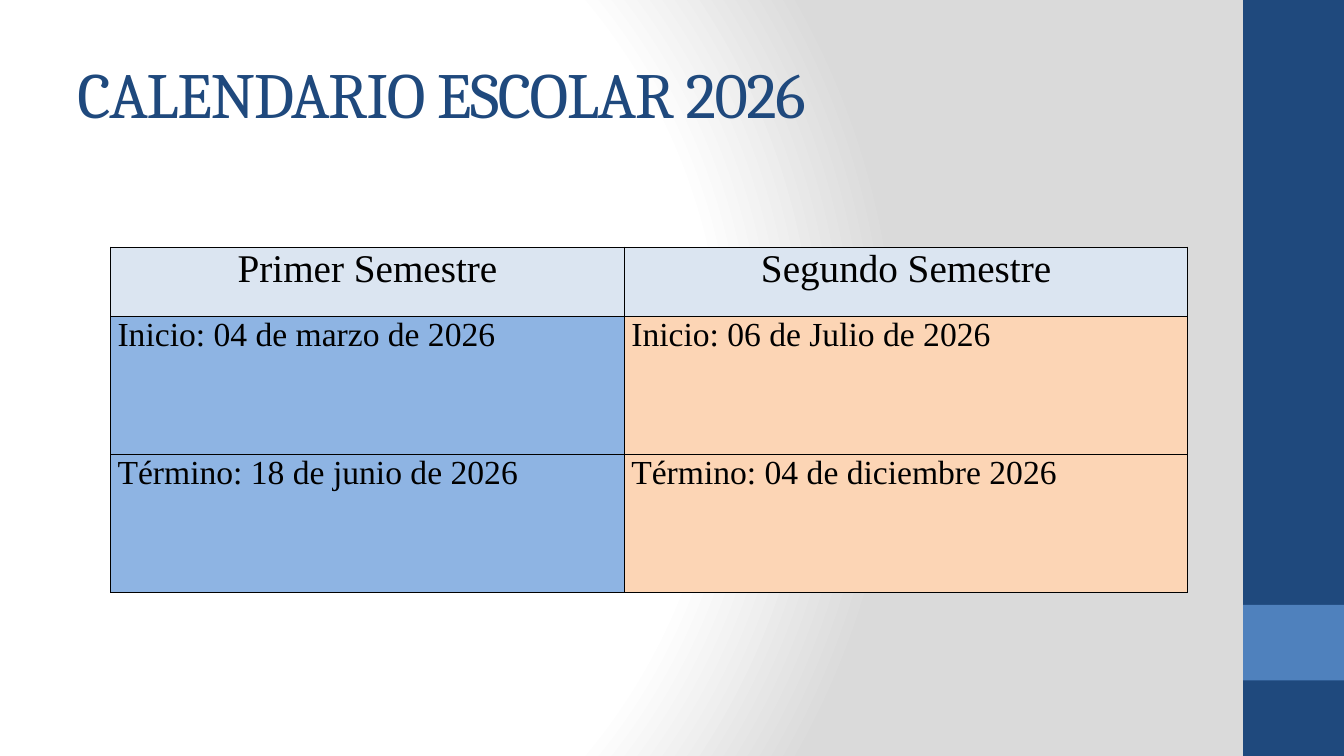
from lxml.etree import SubElement
from pptx import Presentation
from pptx.dml.color import RGBColor
from pptx.enum.shapes import MSO_SHAPE
from pptx.enum.text import MSO_ANCHOR, PP_ALIGN
from pptx.oxml import parse_xml
from pptx.oxml.ns import nsdecls, qn
from pptx.util import Pt

NAVY, BLUE, BLACK = "1F497D", "4F81BD", "000000"
HEADER_FILL = "DBE5F1"
SEMESTER_FILLS = ["8EB4E3", "FCD5B5"]
CALENDAR = [
    ["Primer Semestre", "Segundo Semestre"],
    ["Inicio: 04 de marzo de 2026", "Inicio: 06 de Julio de 2026"],
    ["Término: 18 de junio de 2026", "Término: 04 de diciembre 2026"],
]
COLUMN_WIDTHS = [367, 402.5]
ROW_HEIGHTS = [49.4, 98.8, 98.8]


def color(code):
    return RGBColor.from_string(code)


def set_background(page):
    """Circular gradient, white inside and grey towards the right."""
    stops = "".join(
        f'<a:gs pos="{position * 1000}"><a:srgbClr val="{code}"/></a:gs>'
        for position, code in [(0, "FFFFFF"), (75, "FFFFFF"), (100, "DADADA")]
    )
    background = parse_xml(
        f'<p:bg {nsdecls("p", "a")}><p:bgPr><a:gradFill rotWithShape="1">'
        f'<a:gsLst>{stops}</a:gsLst><a:path path="circle">'
        '<a:fillToRect l="20000" t="50000" r="100000" b="50000"/></a:path>'
        "</a:gradFill><a:effectLst/></p:bgPr></p:bg>"
    )
    page.element.cSld.insert(0, background)


def add_band(page, top, height, fill):
    band = page.shapes.add_shape(
        MSO_SHAPE.RECTANGLE, Pt(888), Pt(top), Pt(72), Pt(height)
    )
    band.shadow.inherit = False
    band.fill.solid()
    band.fill.fore_color.rgb = color(fill)
    band.line.fill.background()


def set_title(page, text):
    title = page.shapes.title
    title.left, title.top, title.width, title.height = Pt(48), Pt(21.6), Pt(800), Pt(90)
    title.text_frame.vertical_anchor = MSO_ANCHOR.MIDDLE
    para = title.text_frame.paragraphs[0]
    para.alignment = PP_ALIGN.LEFT
    span = para.add_run()
    span.text = text
    span.font.name = "Cambria"
    span.font.size = Pt(46)
    span.font.color.rgb = color(NAVY)
    span.font._element.set("spc", "-100")


def add_borders(cell):
    properties = cell._tc.get_or_add_tcPr()
    for side in ("lnL", "lnR", "lnT", "lnB"):
        line = SubElement(properties, qn(f"a:{side}"), w=str(Pt(1)))
        fill = SubElement(line, qn("a:solidFill"))
        SubElement(fill, qn("a:srgbClr"), val=BLACK)


def fill_cell(cell, text, size, alignment, fill):
    add_borders(cell)
    cell.fill.solid()
    cell.fill.fore_color.rgb = color(fill)
    cell.margin_left = cell.margin_right = Pt(5)
    cell.margin_top = cell.margin_bottom = 0
    cell.text = text
    para = cell.text_frame.paragraphs[0]
    para.alignment = alignment
    para.font.name = "Times New Roman"
    para.font.size = Pt(size)
    para.font.color.rgb = color(BLACK)


def add_calendar(page):
    table = page.shapes.add_table(
        len(CALENDAR), len(COLUMN_WIDTHS), Pt(79), Pt(176.5),
        Pt(sum(COLUMN_WIDTHS)), Pt(sum(ROW_HEIGHTS)),
    ).table
    table.first_row = table.horz_banding = False
    for column, width in zip(table.columns, COLUMN_WIDTHS):
        column.width = Pt(width)
    for row, height, texts in zip(table.rows, ROW_HEIGHTS, CALENDAR):
        row.height = Pt(height)
        for cell, text, fill in zip(row.cells, texts, SEMESTER_FILLS):
            if texts is CALENDAR[0]:
                fill_cell(cell, text, 28, PP_ALIGN.CENTER, HEADER_FILL)
            else:
                fill_cell(cell, text, 24, PP_ALIGN.JUSTIFY, fill)


def main():
    deck = Presentation()
    deck.slide_width, deck.slide_height = Pt(960), Pt(540)
    page = deck.slides.add_slide(deck.slide_layouts[5])
    set_background(page)
    add_band(page, 0, 540, NAVY)
    add_band(page, 432, 54, BLUE)
    set_title(page, "CALENDARIO ESCOLAR 2026")
    add_calendar(page)
    deck.save("out.pptx")


if __name__ == "__main__":
    main()
